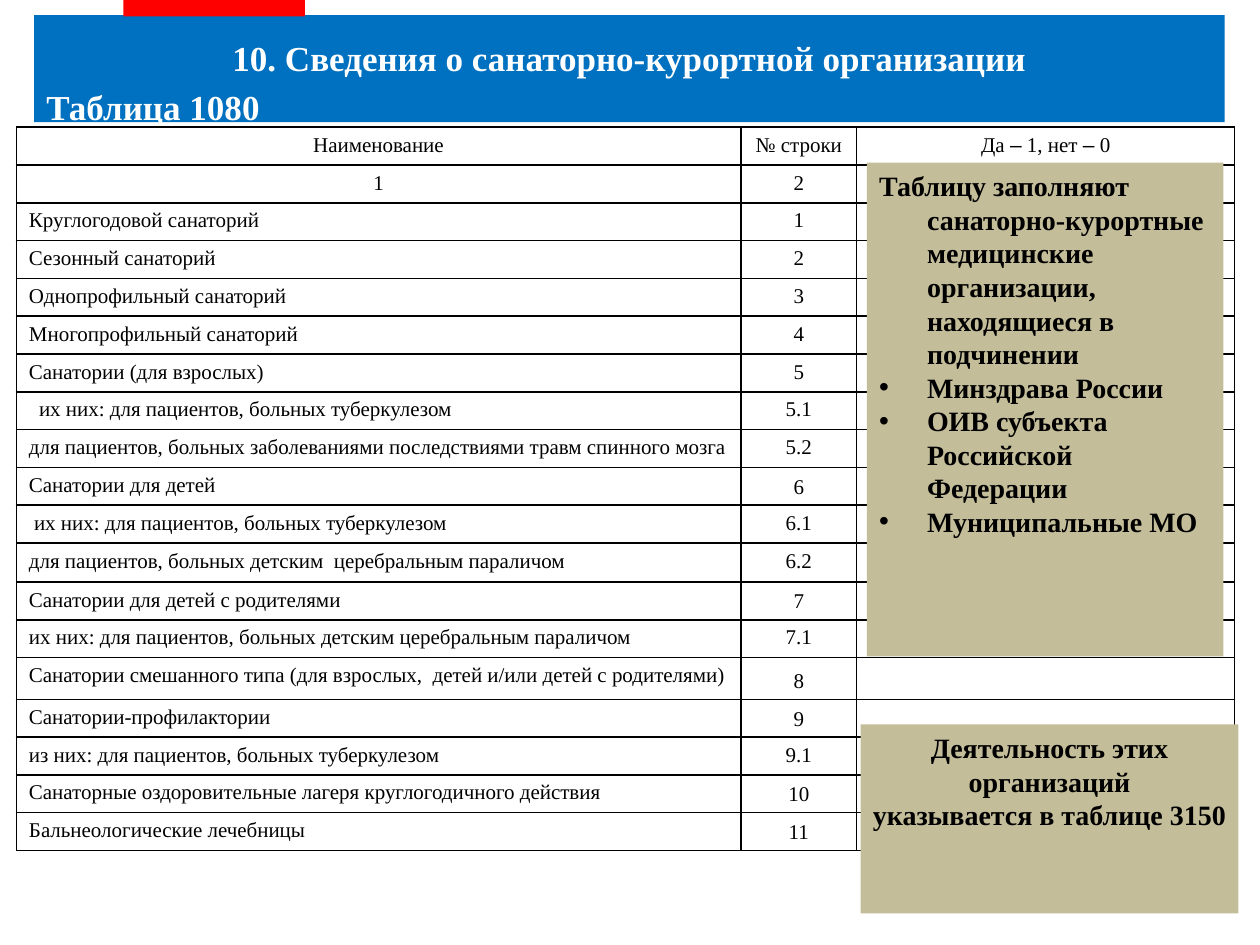
from lxml.etree import SubElement
from pptx import Presentation
from pptx.dml.color import RGBColor
from pptx.enum.shapes import MSO_SHAPE
from pptx.enum.text import MSO_ANCHOR, MSO_AUTO_SIZE, PP_ALIGN
from pptx.oxml.ns import qn
from pptx.util import Inches, Pt

FONT = "Times New Roman"
BLUE, RED, SAND = "0070C0", "FF0000", "C4BD99"
BLACK, WHITE = "000000", "FFFFFF"

COLUMN_WIDTHS = [5.75, 0.92, 3]
ROW_HEIGHT = 0.3
TALL_ROWS = {11: 0.31, 14: 0.33}
LOW_NUMBERS = {"6", "7", "8", "9", "10", "11"}  # row numbers set at the cell bottom
SUBROW_INDENTS = {"5.1": 0.08, "6.1": 0.04}

HEADER = [
    ("Наименование", "№ строки", "Да – 1, нет – 0"),
    ("1", "2", "3"),
]
ROWS = [
    ("Круглогодовой санаторий", "1"),
    ("Сезонный санаторий", "2"),
    ("Однопрофильный санаторий", "3"),
    ("Многопрофильный санаторий", "4"),
    ("Санатории (для взрослых)", "5"),
    ("их них: для пациентов, больных туберкулезом", "5.1"),
    ("для пациентов, больных заболеваниями последствиями травм спинного мозга", "5.2"),
    ("Санатории для детей", "6"),
    ("их них: для пациентов, больных туберкулезом", "6.1"),
    ("для пациентов, больных детским  церебральным параличом", "6.2"),
    ("Санатории для детей с родителями", "7"),
    ("их них: для пациентов, больных детским церебральным параличом", "7.1"),
    ("Санатории смешанного типа (для взрослых,  детей и/или детей с родителями)", "8"),
    ("Санатории-профилактории", "9"),
    ("из них: для пациентов, больных туберкулезом", "9.1"),
    ("Санаторные оздоровительные лагеря круглогодичного действия", "10"),
    ("Бальнеологические лечебницы", "11"),
]


def rgb(value):
    return RGBColor.from_string(value)


def style(p, size, color=BLACK, bold=False, align=PP_ALIGN.LEFT):
    p.alignment = align
    p.font.name = FONT
    p.font.size = Pt(size)
    p.font.bold = bold
    p.font.color.rgb = rgb(color)


def indent(p, left, first=0.0, bullet=None):
    """Set the indents in inches and, if given, the bullet character."""
    pPr = p._p.get_or_add_pPr()
    pPr.set("marL", str(Inches(left)))
    pPr.set("indent", str(Inches(first)))
    if bullet:
        mark = pPr.makeelement(qn("a:buChar"), {"char": bullet})
        pPr.insert(0, mark)
        face = pPr.makeelement(qn("a:buFont"), {"typeface": "Arial"})
        mark.addprevious(face)


def add_box(slide, left, top, width, height, fill):
    sp = slide.shapes.add_shape(MSO_SHAPE.RECTANGLE, Inches(left), Inches(top),
                                Inches(width), Inches(height))
    sp.shadow.inherit = False
    sp.fill.solid()
    sp.fill.fore_color.rgb = rgb(fill)
    sp.line.fill.background()
    return sp


def add_note(slide, left, top, width, height, lines, align=PP_ALIGN.LEFT):
    """Add a sand box; lines are pairs of text and bullet character."""
    tf = add_box(slide, left, top, width, height, SAND).text_frame
    tf.word_wrap = True
    tf.vertical_anchor = MSO_ANCHOR.TOP
    for i, (text, bullet) in enumerate(lines):
        p = tf.add_paragraph() if i else tf.paragraphs[0]
        p.text = text
        style(p, 16, bold=True, align=align)
        indent(p, 0.38, -0.38, bullet)


def add_heading(slide):
    title = slide.shapes.title
    bar = add_box(slide, 0.27, 0.12, 9.45, 0.85, BLUE)
    title.element.addprevious(bar.element)
    title.left, title.top = Inches(0.41), Inches(0.25)
    title.width, title.height = Inches(9.17), Inches(0.42)
    label = slide.shapes.add_textbox(Inches(0.27), Inches(0.68), Inches(2.25), Inches(0.33))
    for sp, text, align in (
        (title, "10. Сведения о санаторно-курортной организации", PP_ALIGN.CENTER),
        (label, "Таблица 1080", PP_ALIGN.LEFT),
    ):
        tf = sp.text_frame
        tf.text = text
        tf.word_wrap = True
        tf.auto_size = MSO_AUTO_SIZE.NONE
        tf.vertical_anchor = MSO_ANCHOR.MIDDLE
        style(tf.paragraphs[0], 20, WHITE, True, align)


def set_borders(cell):
    tcPr = cell._tc.get_or_add_tcPr()
    for i, side in enumerate(("lnL", "lnR", "lnT", "lnB")):
        ln = tcPr.makeelement(qn(f"a:{side}"), {"w": str(Pt(1))})
        tcPr.insert(i, ln)
        fill = SubElement(ln, qn("a:solidFill"))
        SubElement(fill, qn("a:srgbClr"), val=BLACK)


def fill_cell(cell, text, align):
    cell.fill.background()
    set_borders(cell)
    p = cell.text_frame.paragraphs[0]
    style(p, 12, align=align)
    if not text:
        # An empty cell takes its line height from the end mark
        SubElement(p._p, qn("a:endParaRPr"), sz="1200")
    for i, part in enumerate(text.split("–")):
        if i:
            dash = p.add_run()
            dash.text = "–"
            dash.font.name = "Arial"
        if part:
            p.add_run().text = part


def add_sanatorium_table(slide):
    rows = HEADER + [(name, number, "") for name, number in ROWS]
    heights = [TALL_ROWS.get(i, ROW_HEIGHT) for i in range(len(rows))]
    table = slide.shapes.add_table(
        len(rows), len(COLUMN_WIDTHS), Inches(0.13), Inches(1.01),
        Inches(sum(COLUMN_WIDTHS)), Inches(sum(heights))).table
    table.first_row = table.horz_banding = False
    for column, width in zip(table.columns, COLUMN_WIDTHS):
        column.width = Inches(width)
    for r, (texts, height) in enumerate(zip(rows, heights)):
        table.rows[r].height = Inches(height)
        for c, text in enumerate(texts):
            is_name = c == 0 and r >= len(HEADER)
            fill_cell(table.cell(r, c), text, PP_ALIGN.LEFT if is_name else PP_ALIGN.CENTER)
        number = texts[1]
        if number in LOW_NUMBERS:
            table.cell(r, 1).vertical_anchor = MSO_ANCHOR.BOTTOM
        if number in SUBROW_INDENTS:
            indent(table.cell(r, 0).text_frame.paragraphs[0], SUBROW_INDENTS[number])


def main():
    prs = Presentation()
    prs.slide_width, prs.slide_height = Inches(10), Inches(7.5)
    slide = prs.slides.add_slide(prs.slide_layouts[5])
    add_heading(slide)
    add_sanatorium_table(slide)
    add_note(slide, 6.88, 1.29, 2.83, 3.92, [
        ("Таблицу заполняют санаторно-курортные медицинские организации, "
         "находящиеся в подчинении", None),
        ("Минздрава России", "•"),
        ("ОИВ субъекта Российской Федерации", "•"),
        ("Муниципальные МО", "•"),
    ])
    add_note(slide, 6.83, 5.75, 3, 1.5, [
        ("Деятельность этих", None),
        ("организаций", None),
        ("указывается в таблице 3150", None),
    ], PP_ALIGN.CENTER)
    add_box(slide, 0.98, -0.03, 1.44, 0.16, RED)
    prs.save("out.pptx")


if __name__ == "__main__":
    main()
